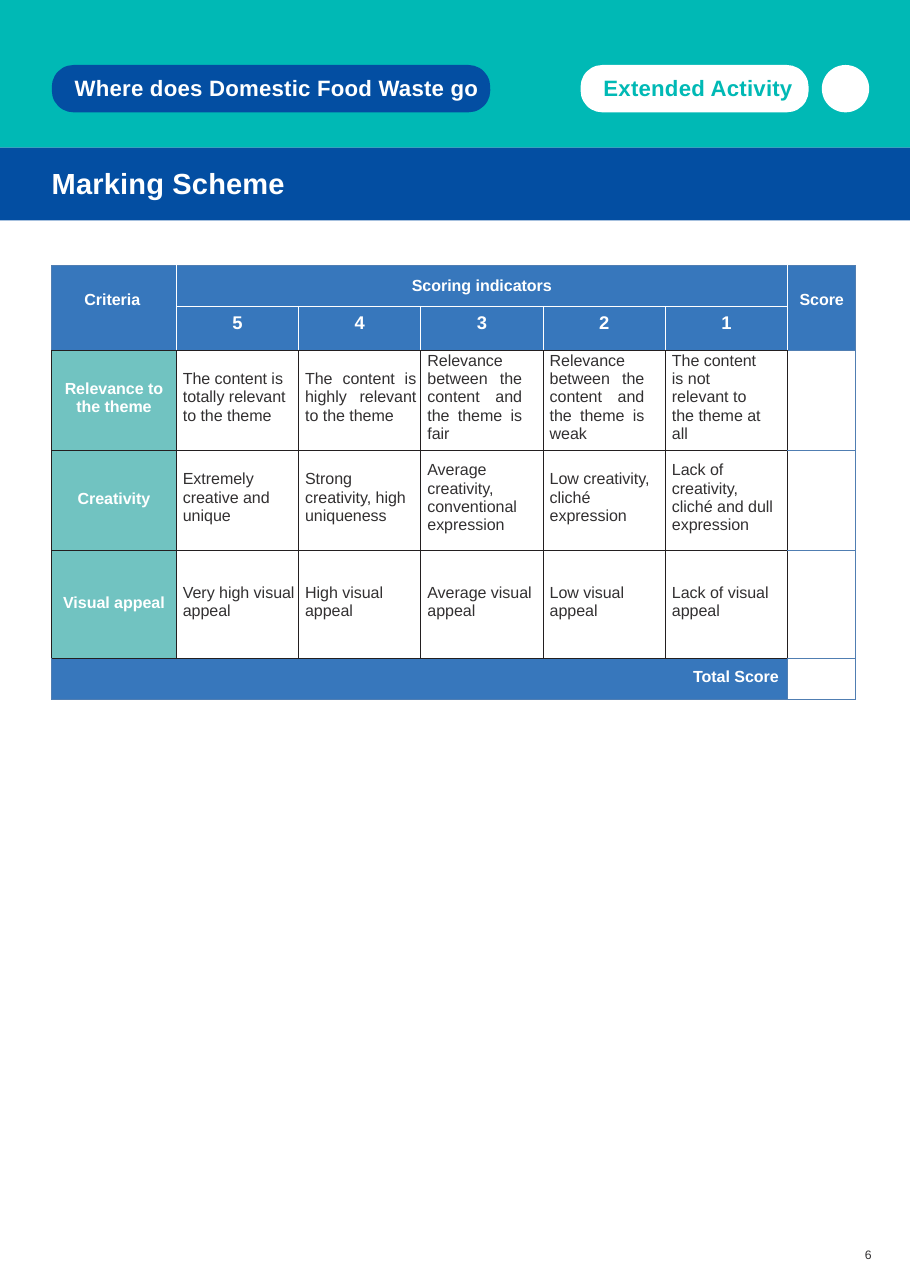
"""Build the marking scheme page with its scoring table."""
from lxml.etree import SubElement
from pptx import Presentation
from pptx.dml.color import RGBColor
from pptx.enum.shapes import MSO_SHAPE as Shape
from pptx.enum.text import MSO_ANCHOR as Anchor, PP_ALIGN as Align
from pptx.oxml.ns import qn
from pptx.util import Inches, Pt

TEAL, NAVY, WHITE, INK = "00B9B5", "034EA2", "FFFFFF", "323031"
HEADER_BLUE, LABEL_TEAL, EDGE_BLUE, EDGE_DARK = "3777BC", "71C3C1", "507EB2", "231F20"
PAGE_WIDTH, PAGE_HEIGHT = 8.26, 11.69

BANNERS = [
    (Shape.RECTANGLE, (0, 0, PAGE_WIDTH, 1.34), TEAL, "", 0, 0, WHITE),
    (Shape.RECTANGLE, (0, 1.34, PAGE_WIDTH, 0.66), NAVY, "Marking Scheme", 19, 0.47, WHITE),
    (Shape.ROUNDED_RECTANGLE, (0.47, 0.59, 3.98, 0.43), NAVY,
     "Where does Domestic Food Waste go", 14.5, 0.15, WHITE),
    (Shape.ROUNDED_RECTANGLE, (5.27, 0.59, 2.07, 0.43), WHITE, "Extended Activity", 14.5, 0.15, TEAL),
    (Shape.OVAL, (7.46, 0.59, 0.43, 0.43), WHITE, "", 0, 0, WHITE),
]
PAGE_NUMBER = "6"

SCORES = ["5", "4", "3", "2", "1"]
CRITERIA = {
    "Relevance to the theme": [
        "The content is totally relevant to the theme",
        "The content is highly relevant to the theme",
        "Relevance\nbetween the content and the theme is fair",
        "Relevance\nbetween the content and the theme is weak",
        "The content is not relevant to the theme at all",
    ],
    "Creativity": [
        "Extremely\ncreative and unique",
        "Strong\ncreativity, high uniqueness",
        "Average\ncreativity,\nconventional expression",
        "Low creativity, cliché\nexpression",
        "Lack of\ncreativity,\ncliché and dull expression",
    ],
    "Visual appeal": [
        f"{level} visual appeal" for level in ("Very high", "High", "Average", "Low", "Lack of")
    ],
}
RELEVANCE_LAYOUT = [(Align.LEFT, 0), (Align.JUSTIFY, 0.04), (Align.JUSTIFY, 0.19),
                    (Align.JUSTIFY, 0.19), (Align.LEFT, 0.15)]
COLUMN_WIDTHS = [1.13] + [1.11] * len(SCORES) + [0.62]
ROW_HEIGHTS = [0.37, 0.4, 0.91, 0.91, 0.98, 0.37]
TABLE_LEFT, TABLE_TOP = 0.47, 2.41


def rgb(code):
    return RGBColor.from_string(code)


def write(frame, text, size, color, bold=True, align=Align.LEFT, line_spacing=1.0, tracking=0):
    frame.text = text
    for paragraph in frame.paragraphs:
        paragraph.alignment = align
        paragraph.line_spacing = line_spacing
        for run in paragraph.runs:
            run.font.name, run.font.size, run.font.bold = "Arial", Pt(size), bold
            run.font.color.rgb = rgb(color)
            if tracking:
                run.font._element.set("spc", str(tracking))


def set_margins(holder, left=0, right=0, bottom=0):
    holder.margin_left, holder.margin_right = Inches(left), Inches(right)
    holder.margin_top, holder.margin_bottom = 0, Inches(bottom)


def draw_banner(slide, kind, box, fill, text, size, indent, color):
    banner = slide.shapes.add_shape(kind, *map(Inches, box))
    banner.shadow.inherit = False
    banner.fill.solid()
    banner.fill.fore_color.rgb = rgb(fill)
    banner.line.fill.background()
    if kind == Shape.ROUNDED_RECTANGLE:
        banner.adjustments[0] = 0.46
    if text:
        frame = banner.text_frame
        set_margins(frame, left=indent, bottom=0.02)
        frame.word_wrap, frame.vertical_anchor = False, Anchor.MIDDLE
        write(frame, text, size, color, tracking=15)


def set_borders(cell, left, right, top, bottom):
    properties = cell._tc.get_or_add_tcPr()
    for side, color in zip("LRTB", (left, right, top, bottom)):
        width = Pt(0.5 if color == EDGE_DARK else 0.75)
        line = SubElement(properties, qn(f"a:ln{side}"), w=str(width))
        SubElement(SubElement(line, qn("a:solidFill")), qn("a:srgbClr"), val=color)


def style_cell(cell, borders, fill=None):
    set_borders(cell, *borders)
    if fill:
        cell.fill.solid()
        cell.fill.fore_color.rgb = rgb(fill)
    else:
        cell.fill.background()
    set_margins(cell)


def cell_look(row, column):
    last_row, last_column = len(ROW_HEIGHTS) - 1, len(COLUMN_WIDTHS) - 1
    if row < 2:
        left = EDGE_BLUE if column == 0 else WHITE
        right = EDGE_BLUE if column == last_column else WHITE
        top = EDGE_BLUE if row == 0 else WHITE
        bottom = EDGE_BLUE if column == last_column else EDGE_DARK
        if row == 0 and 0 < column < last_column:
            bottom = WHITE
        return (left, right, top, bottom), HEADER_BLUE
    if row == last_row:
        top = EDGE_BLUE if column == last_column else EDGE_DARK
        return (EDGE_BLUE, EDGE_BLUE, top, EDGE_BLUE), None if column == last_column else HEADER_BLUE
    if column == last_column:
        return (EDGE_DARK, EDGE_BLUE, EDGE_BLUE, EDGE_BLUE), None
    return (EDGE_DARK,) * 4, LABEL_TEAL if column == 0 else None


def fill_cell(cell, text, size=10.5, color=WHITE, bold=True, align=Align.CENTER,
              line_spacing=1.0, left=0, right=0, bottom=0):
    set_margins(cell, left, right, bottom)
    cell.vertical_anchor = Anchor.MIDDLE
    write(cell.text_frame, text, size, color, bold, align, line_spacing)


def draw_table(slide):
    table = slide.shapes.add_table(
        len(ROW_HEIGHTS), len(COLUMN_WIDTHS), Inches(TABLE_LEFT), Inches(TABLE_TOP),
        Inches(sum(COLUMN_WIDTHS)), Inches(sum(ROW_HEIGHTS))).table
    table.first_row = table.horz_banding = False
    for column, width in zip(table.columns, COLUMN_WIDTHS):
        column.width = Inches(width)
    for row, height in zip(table.rows, ROW_HEIGHTS):
        row.height = Inches(height)
    for row in range(len(ROW_HEIGHTS)):
        for column in range(len(COLUMN_WIDTHS)):
            style_cell(table.cell(row, column), *cell_look(row, column))

    last_row, last_column = len(ROW_HEIGHTS) - 1, len(COLUMN_WIDTHS) - 1
    for start, end in [((0, 0), (1, 0)), ((0, 1), (0, last_column - 1)),
                       ((0, last_column), (1, last_column)), ((last_row, 0), (last_row, last_column - 1))]:
        table.cell(*start).merge(table.cell(*end))

    fill_cell(table.cell(0, 0), "Criteria", right=0.03, bottom=0.14)
    fill_cell(table.cell(0, 1), "Scoring indicators")
    fill_cell(table.cell(0, last_column), "Score", bottom=0.14)
    for column, score in enumerate(SCORES, 1):
        fill_cell(table.cell(1, column), score, size=12, bottom=0.1)
    for row, (criterion, indicators) in enumerate(CRITERIA.items(), 2):
        fill_cell(table.cell(row, 0), criterion, bottom=0.04)
        layout = RELEVANCE_LAYOUT if row == 2 else [(Align.LEFT, 0)] * len(SCORES)
        for column, (indicator, (align, right)) in enumerate(zip(indicators, layout), 1):
            fill_cell(table.cell(row, column), indicator, color=INK, bold=False, align=align,
                      line_spacing=1.03, left=0.06, right=right, bottom=0.06)
    fill_cell(table.cell(last_row, 0), "Total Score", align=Align.RIGHT, right=0.08, bottom=0.04)


def main():
    deck = Presentation()
    deck.slide_width, deck.slide_height = Inches(PAGE_WIDTH), Inches(PAGE_HEIGHT)
    slide = deck.slides.add_slide(deck.slide_layouts[6])
    for banner in BANNERS:
        draw_banner(slide, *banner)
    draw_table(slide)
    footer = slide.shapes.add_textbox(Inches(7.81), Inches(11.32), Inches(0.23), Inches(0.13)).text_frame
    footer.word_wrap = True
    set_margins(footer, left=0.04)
    write(footer, PAGE_NUMBER, 8, INK, bold=False)
    deck.save("out.pptx")


if __name__ == "__main__":
    main()
